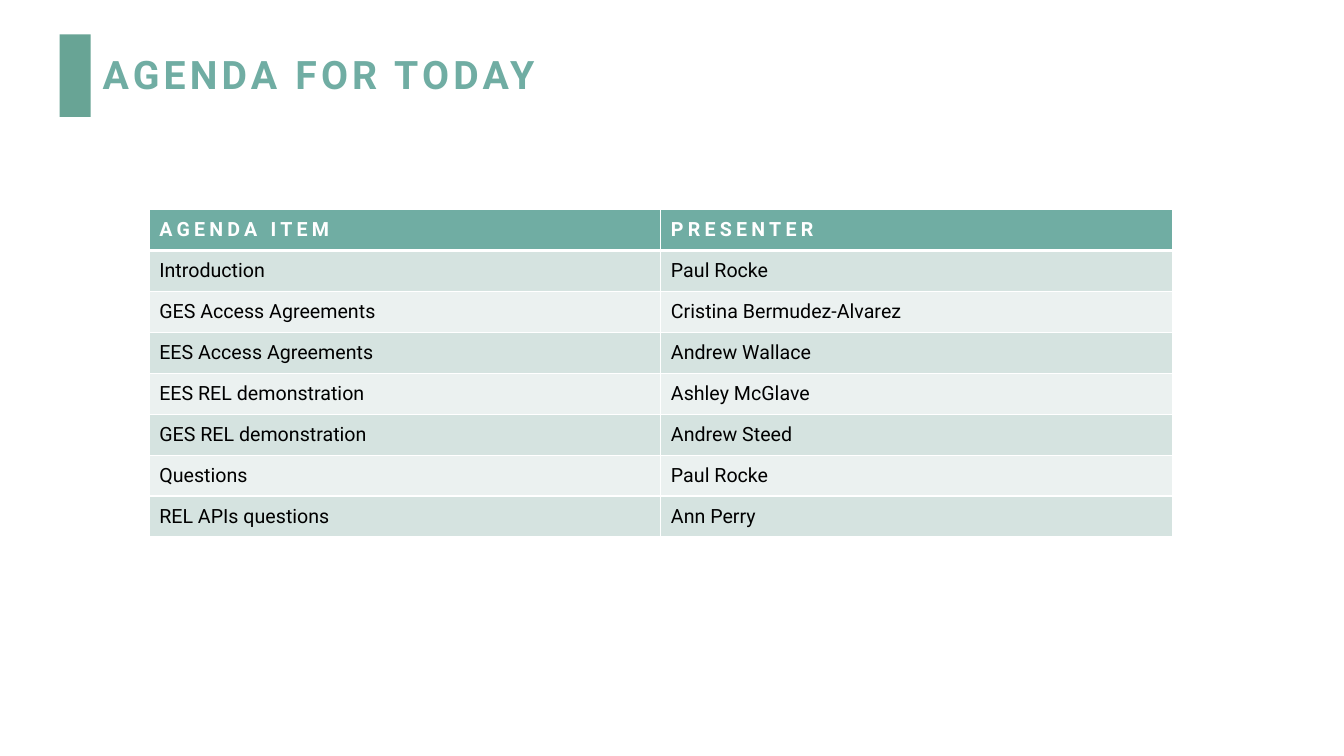
from lxml import etree
from pptx import Presentation
from pptx.dml.color import RGBColor
from pptx.enum.shapes import MSO_SHAPE
from pptx.enum.text import MSO_ANCHOR
from pptx.oxml.ns import qn
from pptx.util import Inches, Pt

COLORS = {
    "accent": "68A495",
    "teal": "70ADA3",
    "dark_band": "D5E3E0",
    "light_band": "EBF1F0",
    "white": "FFFFFF",
    "black": "000000",
}
FORMATS = {
    "title": {"size": Pt(28), "bold": True, "name": "Roboto"},
    "header": {"size": Pt(14), "bold": True, "name": "Roboto"},
    "body": {"size": Pt(14), "bold": False, "name": "Roboto"},
}
AGENDA = [
    ("AGENDA ITEM", "PRESENTER"),
    ("Introduction", "Paul Rocke"),
    ("GES Access Agreements", "Cristina Bermudez-Alvarez"),
    ("EES Access Agreements", "Andrew Wallace"),
    ("EES REL demonstration", "Ashley McGlave"),
    ("GES REL demonstration", "Andrew Steed"),
    ("Questions", "Paul Rocke"),
    ("REL APIs questions", "Ann Perry"),
]


def write_text(text_frame, text, style, color, spacing=0):
    paragraph = text_frame.paragraphs[0]
    run = paragraph.add_run()
    run.text = text
    for name, value in FORMATS[style].items():
        setattr(run.font, name, value)
    run.font.color.rgb = RGBColor.from_string(COLORS[color])
    run.font._element.set("spc", str(spacing * 100))
    return paragraph


def add_border(cell, side, width):
    properties = cell._tc.get_or_add_tcPr()
    line = etree.SubElement(properties, qn(f"a:ln{side}"), w=str(Pt(width)))
    fill = etree.SubElement(line, qn("a:solidFill"))
    etree.SubElement(fill, qn("a:srgbClr"), val=COLORS["white"])


presentation = Presentation()
presentation.slide_width = Inches(13.33)
presentation.slide_height = Inches(7.5)
slide = presentation.slides.add_slide(presentation.slide_layouts[6])

accent_bar = slide.shapes.add_shape(
    MSO_SHAPE.RECTANGLE, Inches(0.59), Inches(0.34), Inches(0.31), Inches(0.82)
)
accent_bar.shadow.inherit = False
accent_bar.fill.solid()
accent_bar.fill.fore_color.rgb = RGBColor.from_string(COLORS["accent"])
accent_bar.line.fill.background()

title = slide.shapes.add_textbox(
    Inches(0.92), Inches(0.4), Inches(10.15), Inches(0.72)
)
title.text_frame.word_wrap = True
title.text_frame.vertical_anchor = MSO_ANCHOR.MIDDLE
paragraph = write_text(title.text_frame, "AGENDA FOR TODAY", "title", "teal", 3)
paragraph.line_spacing = 0.9

table = slide.shapes.add_table(
    len(AGENDA), 2, Inches(1.48), Inches(2.08), Inches(10.15), Inches(3.25)
).table

for row, texts in enumerate(AGENDA):
    is_header = row == 0
    band = "teal" if is_header else ("dark_band" if row % 2 else "light_band")
    for column, text in enumerate(texts):
        cell = table.cell(row, column)
        cell.vertical_anchor = MSO_ANCHOR.MIDDLE
        for side in "LRTB":
            thick = (row, side) in [(0, "B"), (1, "T")]
            add_border(cell, side, 3 if thick else 1)
        cell.fill.solid()
        cell.fill.fore_color.rgb = RGBColor.from_string(COLORS[band])
        if is_header:
            write_text(cell.text_frame, text, "header", "white", 3)
        else:
            write_text(cell.text_frame, text, "body", "black")

presentation.save("out.pptx")
